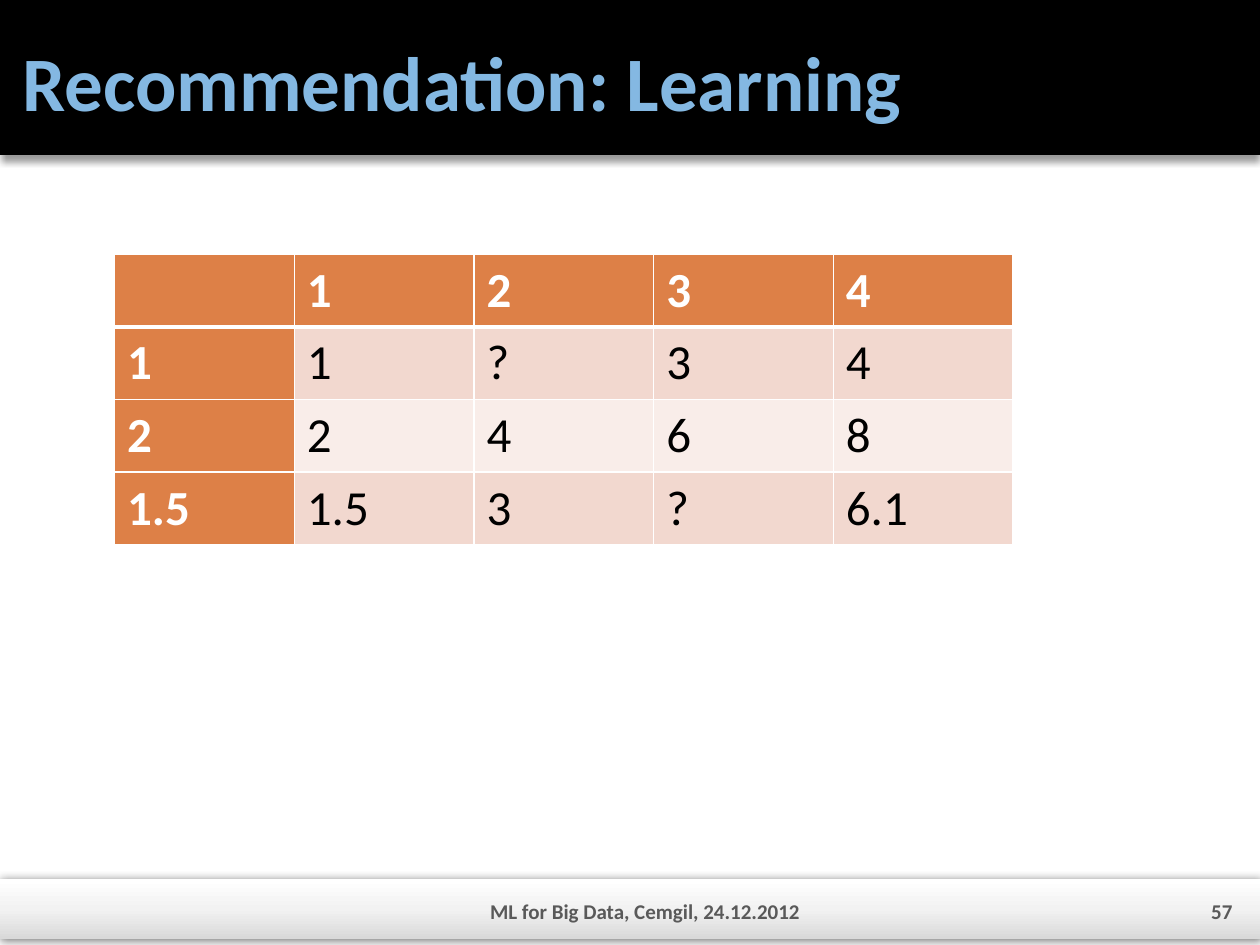
from dataclasses import dataclass

from lxml import etree
from pptx import Presentation
from pptx import util as u
from pptx.dml.color import RGBColor
from pptx.enum import shapes, text
from pptx.oxml.ns import qn

Inches = u.Inches


@dataclass(frozen=True)
class Theme:
    font: str = "Calibri"
    title_size: int = 44
    table_size: int = 28
    footer_size: int = 12
    title: str = "84B8E2"
    header_band: str = "000000"
    footer_stops: tuple = ((0, "D9D9D9"), (50, "F2F2F2"), (100, "FFFFFF"))
    footer_text: str = "595959"
    table_head: str = "DD8047"
    table_bands: tuple = ("F2D8CF", "F9EDE9")
    table_text: str = "000000"
    white: str = "FFFFFF"


THEME = Theme()
RATINGS = [
    ["", "1", "2", "3", "4"],
    ["1", "1", "?", "3", "4"],
    ["2", "2", "4", "6", "8"],
    ["1.5", "1.5", "3", "?", "6.1"],
]


def add_node(parent, tag, **attributes):
    values = {name: str(value) for name, value in attributes.items()}
    return etree.SubElement(parent, qn(f"a:{tag}"), values)


def write(para, words, size, color, bold=True):
    span = para.add_run()
    span.text = words
    span.font.name = THEME.font
    span.font.size = u.Pt(size)
    span.font.bold = bold
    span.font.color.rgb = RGBColor.from_string(color)


def set_frame(frame, left, top, right, bottom):
    frame.word_wrap = True
    frame.auto_size = text.MSO_AUTO_SIZE.NONE
    frame.vertical_anchor = text.MSO_ANCHOR.MIDDLE
    frame.margin_left, frame.margin_top = Inches(left), Inches(top)
    frame.margin_right, frame.margin_bottom = Inches(right), Inches(bottom)


def add_band(page, box, opacity, blur, distance, angle):
    """Add a full-width bar with a soft shadow; the caller fills it."""
    band = page.shapes.add_shape(shapes.MSO_SHAPE.RECTANGLE, *map(Inches, box))
    band.line.fill.background()
    band.shadow.inherit = False
    effects = band.element.spPr.find(qn("a:effectLst"))
    shadow = add_node(effects, "outerShdw", blurRad=u.Pt(blur), dist=u.Pt(distance),
                      dir=angle * 60000, algn="ctr", rotWithShape=0)
    add_node(add_node(shadow, "srgbClr", val="000000"), "alpha", val=opacity * 1000)
    return band


def add_header(page, box, words):
    left, top, width, height = box
    band = add_band(page, box, opacity=40, blur=4, distance=3, angle=90)
    band.fill.solid()
    band.fill.fore_color.rgb = RGBColor.from_string(THEME.header_band)

    title = page.shapes.title
    band.element.addnext(title.element)  # the title stands in front of its band
    title.left, title.top = Inches(left + 0.08), Inches(top + 0.13)
    title.width, title.height = Inches(width - 0.2), Inches(height - 0.21)
    set_frame(title.text_frame, 0.1, 0.05, 0.05, 0.05)
    para = title.text_frame.paragraphs[0]
    para.alignment = text.PP_ALIGN.LEFT
    write(para, words, THEME.title_size, THEME.title)


def add_footer(page, box, words, number):
    left, top, width, height = box
    band = add_band(page, box, opacity=50, blur=5, distance=0, angle=0)
    band.fill.gradient()
    band.fill.gradient_angle = 90
    stops = band.element.spPr.find(qn("a:gradFill")).find(qn("a:gsLst"))
    for stop in list(stops):
        stops.remove(stop)
    for position, color in THEME.footer_stops:
        add_node(add_node(stops, "gs", pos=position * 1000), "srgbClr", val=color)

    entries = [
        (words, 1.22, 7.8, 0.05, text.PP_ALIGN.CENTER),
        (number, width - 0.92, 0.8, 0.1, text.PP_ALIGN.RIGHT),
    ]
    for entry, offset, span_width, inset, alignment in entries:
        label = page.shapes.add_textbox(Inches(left + offset), Inches(top + 0.08),
                                        Inches(span_width), Inches(0.3))
        set_frame(label.text_frame, inset, 0.05, inset, 0)
        para = label.text_frame.paragraphs[0]
        para.alignment = alignment
        write(para, entry, THEME.footer_size, THEME.footer_text)


def set_borders(cell, bottom):
    properties = cell._tc.get_or_add_tcPr()
    widths = {"lnL": 1, "lnR": 1, "lnT": 1, "lnB": bottom}
    for index, (side, width) in enumerate(widths.items()):
        line = add_node(properties, side, w=u.Pt(width))
        add_node(add_node(line, "solidFill"), "srgbClr", val=THEME.white)
        properties.insert(index, line)  # borders come before the fill


def add_ratings(page, box, rows):
    left, top, width, height = map(Inches, box)
    table = page.shapes.add_table(len(rows), len(rows[0]), left, top, width, height).table
    table.first_col = True
    for column in table.columns:
        column.width = width // len(rows[0])
    for r, values in enumerate(rows):
        table.rows[r].height = height // len(rows)
        for c, value in enumerate(values):
            cell = table.cell(r, c)
            heading = r == 0 or c == 0
            fill = THEME.table_head if heading else THEME.table_bands[(r - 1) % 2]
            cell.fill.solid()
            cell.fill.fore_color.rgb = RGBColor.from_string(fill)
            set_borders(cell, bottom=3 if r == 0 else 1)
            para = cell.text_frame.paragraphs[0]
            if value:
                color = THEME.white if heading else THEME.table_text
                write(para, value, THEME.table_size, color, heading)
            else:
                para.font.size = u.Pt(THEME.table_size)


def main():
    deck = Presentation()
    deck.slide_width, deck.slide_height = Inches(10), Inches(7.5)
    page = deck.slides.add_slide(deck.slide_layouts[5])
    add_header(page, (0, 0, 10, 1.23), "Recommendation: Learning")
    add_ratings(page, (0.91, 2.02, 7.13, 2.27), RATINGS)
    add_footer(page, (0, 6.98, 10, 0.47), "ML for Big Data, Cemgil, 24.12.2012", "57")
    deck.save("out.pptx")


if __name__ == "__main__":
    main()
